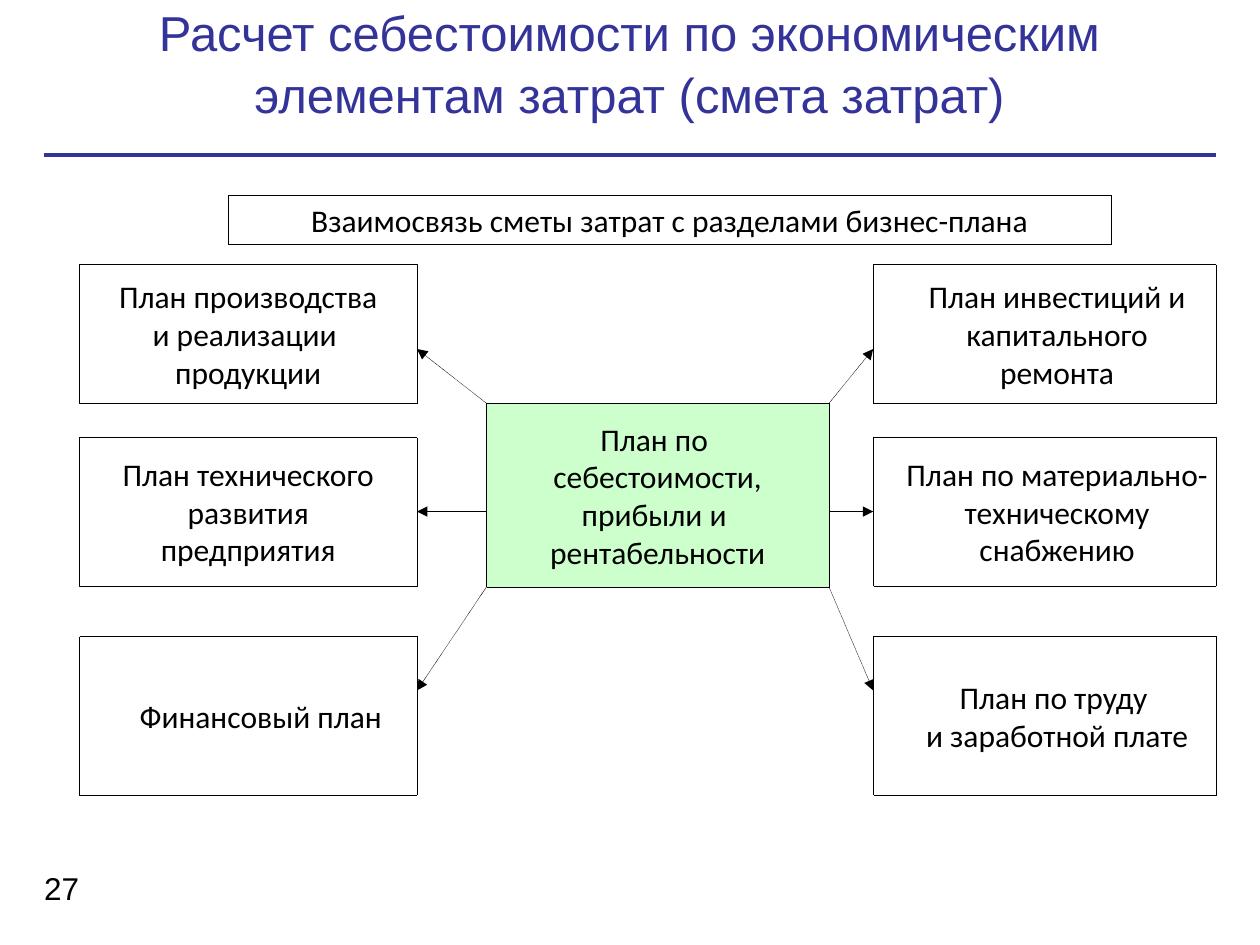
from pptx import Presentation
from pptx.dml.color import RGBColor
from pptx.enum.dml import MSO_LINE
from pptx.enum.shapes import MSO_CONNECTOR, MSO_SHAPE
from pptx.enum.text import MSO_ANCHOR, PP_ALIGN
from pptx.oxml.ns import qn
from pptx.util import Inches, Pt
from lxml import etree

DOT = MSO_LINE.ROUND_DOT
RECT = MSO_SHAPE.RECTANGLE
LINE = MSO_CONNECTOR.STRAIGHT
TOP, MID = MSO_ANCHOR.TOP, MSO_ANCHOR.MIDDLE
LEFT, MIDDLE = PP_ALIGN.LEFT, PP_ALIGN.CENTER

# Content
TITLE = "Расчет себестоимости по экономическим элементам затрат (смета затрат)"
HEAD = ["Взаимосвязь сметы затрат с разделами бизнес-плана"]
CORE = ["План по ", "себестоимости,", "прибыли и ", "рентабельности"]
NUMBER = "27"
# Per row: top, height, start and end height of the arrows, left text, right text
ROWS = [
    (2.1, 1.1, 3.2, 2.77,
     ["План производства", "и реализации ", "продукции"],
     ["План инвестиций и", "капитального", "ремонта"]),
    (3.47, 1.18, 4.06, 4.06,
     ["План технического", "развития", "предприятия"],
     ["План по материально-", "техническому", "снабжению"]),
    (5.05, 1.26, 4.66, 5.48,
     ["Финансовый план"],
     ["План по труду ", "и заработной плате"]),
]
INDENTED = {"Финансовый план"}

COLORS = {"blue": "333399", "green": "CCFFCC", "black": "000000"}
HEAD_BOX = (1.81, 1.55, 7.01, 0.39)
CORE_BOX = (3.86, 3.2, 2.72, 1.46)
LEFT_X, LEFT_W = 0.63, 2.68
RIGHT_X, RIGHT_W = 6.93, 2.72
INDENT = 0.2


def color(name):
    return RGBColor.from_string(COLORS[name])


def write(shape, lines, size=18, face="Calibri", ink="black",
          align=MIDDLE, anchor=MID, wrap=False, indent=0):
    frame = shape.text_frame
    frame.text = "\n".join(lines)
    look = dict(margin_left=0, margin_right=0, margin_top=0, margin_bottom=0,
                vertical_anchor=anchor, word_wrap=wrap)
    for key, value in look.items():
        setattr(frame, key, value)
    for para in frame.paragraphs:
        para.alignment = align
        if indent:
            para._p.get_or_add_pPr().set("indent", str(Inches(indent)))
        for key, value in dict(size=Pt(size), name=face).items():
            setattr(para.runs[0].font, key, value)
        para.runs[0].font.color.rgb = color(ink)


def stroke(line, ink="black", width=0.25, dash=DOT):
    line.color.rgb = color(ink)
    line.width = Pt(width)
    if dash:
        line.dash_style = dash


def add_box(slide, area, lines, fill=None, indent=0):
    box = slide.shapes.add_shape(RECT, *map(Inches, area))
    box.shadow.inherit = False
    if fill:
        box.fill.solid()
        box.fill.fore_color.rgb = color(fill)
    else:
        box.fill.background()
    stroke(box.line)
    write(box, lines, indent=indent)
    return box


def add_line(slide, *ends):
    line = slide.shapes.add_connector(LINE, *map(Inches, ends))
    etree.SubElement(line._element.spPr, qn("a:effectLst"))
    return line


def add_arrow(slide, *ends):
    arrow = add_line(slide, *ends)
    stroke(arrow.line)
    tail = etree.SubElement(arrow.line._get_or_add_ln(), qn("a:tailEnd"))
    tail.set("type", "triangle")
    return arrow


def main():
    deck = Presentation()
    deck.slide_width, deck.slide_height = Inches(10), Inches(7.5)
    slide = deck.slides.add_slide(deck.slide_layouts[5])

    # Title, rule and slide number
    title = slide.shapes.title
    place = dict(left=0.35, top=0, width=9.29, height=1.23)
    for key, value in place.items():
        setattr(title, key, Inches(value))
    write(title, [TITLE], 28, "Arial", "blue", anchor=TOP, wrap=True)
    title.text_frame.paragraphs[0].line_spacing = 1.05
    rule = add_line(slide, 0.35, 1.23, 9.65, 1.23)
    stroke(rule.line, "blue", 2, None)
    number = slide.shapes.add_textbox(*map(Inches, (0.35, 6.9, 0.28, 0.3)))
    write(number, [NUMBER], face="Arial", align=LEFT, anchor=TOP)

    # Heading and central plan
    add_box(slide, HEAD_BOX, HEAD)
    add_box(slide, CORE_BOX, CORE, "green")
    core_l = CORE_BOX[0]
    core_r = core_l + CORE_BOX[2]

    # Linked plans on both sides
    for top, height, start, end, *texts in ROWS:
        sides = [(LEFT_X, LEFT_W, core_l, LEFT_X + LEFT_W, 3, 0),
                 (RIGHT_X, RIGHT_W, core_r, RIGHT_X, 1, INDENT)]
        for lines, (x, width, near, far, site, indent) in zip(texts, sides):
            if lines[0] in INDENTED:
                indent = INDENT
            box = add_box(slide, (x, top, width, height), lines, indent=indent)
            arrow = add_arrow(slide, near, start, far, end)
            if start == end:
                arrow.end_connect(box, site)

    deck.save("out.pptx")


if __name__ == "__main__":
    main()
